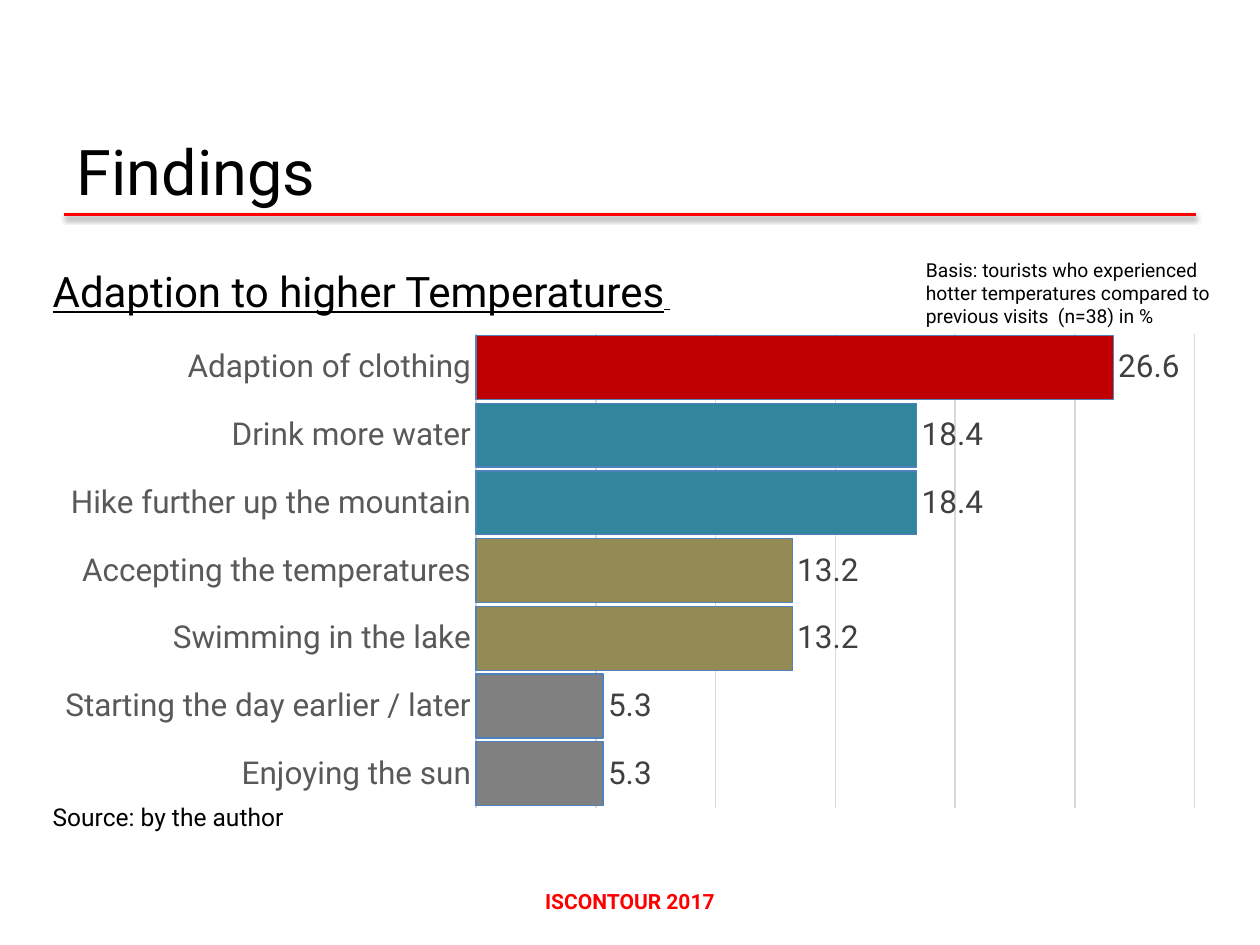
from lxml import etree
from pptx import Presentation
from pptx.chart.data import CategoryChartData
from pptx.dml.color import RGBColor
from pptx.enum.chart import XL_CHART_TYPE, XL_LABEL_POSITION, XL_TICK_MARK
from pptx.enum.shapes import MSO_CONNECTOR
from pptx.enum.text import MSO_ANCHOR, MSO_AUTO_SIZE, PP_ALIGN
from pptx.oxml import parse_xml
from pptx.oxml.ns import nsdecls, qn
from pptx.util import Pt

BAR_CLUSTERED = XL_CHART_TYPE.BAR_CLUSTERED
OUTSIDE_END = XL_LABEL_POSITION.OUTSIDE_END
NO_TICK = XL_TICK_MARK.NONE
STRAIGHT = MSO_CONNECTOR.STRAIGHT
TOP, MIDDLE, BOTTOM = MSO_ANCHOR.TOP, MSO_ANCHOR.MIDDLE, MSO_ANCHOR.BOTTOM
NO_AUTO_SIZE = MSO_AUTO_SIZE.NONE
LEFT, CENTER = PP_ALIGN.LEFT, PP_ALIGN.CENTER

FONT = "Roboto"
COLORS = {
    "text": "000000",
    "accent": "FF0000",
    "category": "595959",
    "value": "404040",
    "grid": "D9D9D9",
    "outline": "4F81BD",
    "gray": "808080",
    "olive": "948A54",
    "teal": "31859C",
    "red": "C00000",
}
ADAPTIONS = [
    ("Enjoying the sun", 5.3, "gray"),
    ("Starting the day earlier / later", 5.3, "gray"),
    ("Swimming in the lake", 13.2, "olive"),
    ("Accepting the temperatures", 13.2, "olive"),
    ("Hike further up the mountain", 18.4, "teal"),
    ("Drink more water", 18.4, "teal"),
    ("Adaption of clothing", 26.6, "red"),
]
PLOT_LAYOUT = {"x": 0.37, "y": 0.02, "w": 0.61, "h": 0.96}


def color(name):
    """Return the named colour."""
    return RGBColor.from_string(COLORS[name])


def style_font(font, size, color_name="text", bold=False, underline=False):
    """Format a font."""
    font.name = FONT
    font.size = Pt(size)
    font.bold = bold
    font.underline = underline
    font.color.rgb = color(color_name)


def place(shape, box):
    """Move a shape to a box given in points."""
    shape.left, shape.top, shape.width, shape.height = map(Pt, box)


def write(shape, runs, align=LEFT, anchor=TOP):
    """Fill a shape with one paragraph of (text, font options) runs."""
    frame = shape.text_frame
    frame.word_wrap = True
    frame.auto_size = NO_AUTO_SIZE
    frame.vertical_anchor = anchor
    paragraph = frame.paragraphs[0]
    paragraph.alignment = align
    for text, options in runs:
        run = paragraph.add_run()
        run.text = text
        style_font(run.font, **options)


def add_text(slide, box, runs, align=LEFT, anchor=TOP):
    """Add a text box."""
    write(slide.shapes.add_textbox(*map(Pt, box)), runs, align, anchor)


def add_heading(slide, box):
    """Place the title and the shadowed rule along its lower edge."""
    left, top, width, height = box
    place(slide.shapes.title, box)
    write(slide.shapes.title, [("Findings", {"size": 36})], anchor=BOTTOM)
    bottom = Pt(top + height)
    rule = slide.shapes.add_connector(
        STRAIGHT, Pt(left), bottom, Pt(left + width), bottom)
    rule.line.color.rgb = color("accent")
    rule.line.width = Pt(2)
    rule._element.spPr.append(parse_xml(
        f'<a:effectLst {nsdecls("a")}>'
        f'<a:outerShdw blurRad="{Pt(3.1)}" dist="{Pt(1.6)}" dir="5400000" rotWithShape="0">'
        f'<a:srgbClr val="{COLORS["text"]}"><a:alpha val="38000"/></a:srgbClr>'
        '</a:outerShdw></a:effectLst>'))


def set_plot_layout(chart):
    """Fix the inner plot area as fractions of the chart."""
    plot_area = chart._chartSpace.chart.plotArea
    for old_layout in plot_area.findall(qn("c:layout")):
        plot_area.remove(old_layout)
    layout = etree.Element(qn("c:layout"))
    manual = etree.SubElement(layout, qn("c:manualLayout"))
    settings = {"layoutTarget": "inner", "xMode": "edge", "yMode": "edge", **PLOT_LAYOUT}
    for tag, value in settings.items():
        etree.SubElement(manual, qn(f"c:{tag}")).set("val", str(value))
    plot_area.insert(0, layout)


def style_axes(chart):
    """Format the category axis and leave only gridlines of the value axis."""
    category_axis = chart.category_axis
    category_axis.major_tick_mark = NO_TICK
    category_axis.minor_tick_mark = NO_TICK
    category_axis.format.line.fill.background()
    style_font(category_axis.tick_labels.font, 18, "category")
    value_axis = chart.value_axis
    value_axis.visible = False
    value_axis.minimum_scale = 0
    value_axis.maximum_scale = 30
    value_axis.major_unit = 5
    value_axis.has_major_gridlines = True
    value_axis.major_gridlines.format.line.color.rgb = color("grid")
    value_axis.major_gridlines.format.line.width = Pt(0.75)


def style_bar(bar, fill_name):
    """Fill and outline a series or one of its points."""
    bar.format.fill.solid()
    bar.format.fill.fore_color.rgb = color(fill_name)
    bar.format.line.color.rgb = color("outline")
    bar.format.line.width = Pt(0.75)


def add_adaption_chart(slide, box):
    """Add the bar chart of adaptions to higher temperatures."""
    data = CategoryChartData()
    data.categories = [name for name, _, _ in ADAPTIONS]
    data.add_series("Series 1", [value for _, value, _ in ADAPTIONS])
    chart = slide.shapes.add_chart(BAR_CLUSTERED, *map(Pt, box), data).chart
    chart.has_legend = False
    chart.has_title = False
    style_font(chart.font, 18)
    set_plot_layout(chart)
    style_axes(chart)
    plot = chart.plots[0]
    plot.gap_width = 6
    plot.vary_by_categories = False
    series = plot.series[0]
    style_bar(series, "outline")
    for index, (_, _, fill_name) in enumerate(ADAPTIONS):
        style_bar(series.points[index], fill_name)
    labels = series.data_labels
    labels.show_value = True
    labels.position = OUTSIDE_END
    style_font(labels.font, 18, "value")


def add_findings(slide, box):
    """Place the chart with its heading, basis note and source line."""
    left, top, width, height = box
    add_adaption_chart(slide, (left, top + 36.7, width, 282.2))
    add_text(slide, (left, top, width, 36), [
        ("Adaption to higher Temperatures", {"size": 24, "underline": True}),
        (" ", {"size": 12, "underline": True}),
    ], anchor=MIDDLE)
    add_text(slide, (left, top + height - 24.5, 423.4, 24.5),
             [("Source: by the author", {"size": 14})])
    basis = ("Basis: tourists who experienced hotter temperatures "
             "compared to previous visits  (n=38) in %")
    add_text(slide, (left + 499, top - 4.3, 197.3, 47.5), [(basis, {"size": 11})])


def add_footer(slide, box):
    """Add the conference name."""
    add_text(slide, box, [
        ("ISCONTOUR 2017", {"size": 12, "color_name": "accent", "bold": True}),
    ], CENTER)


def main():
    """Build and save the slide."""
    presentation = Presentation()
    presentation.slide_width, presentation.slide_height = Pt(720), Pt(540)
    slide = presentation.slides.add_slide(presentation.slide_layouts[5])
    add_heading(slide, (36.7, 15.1, 646.6, 107.5))
    add_findings(slide, (23, 148.3, 673.2, 331.2))
    add_footer(slide, (229.7, 504, 260.6, 21.6))
    presentation.save("out.pptx")


if __name__ == "__main__":
    main()
